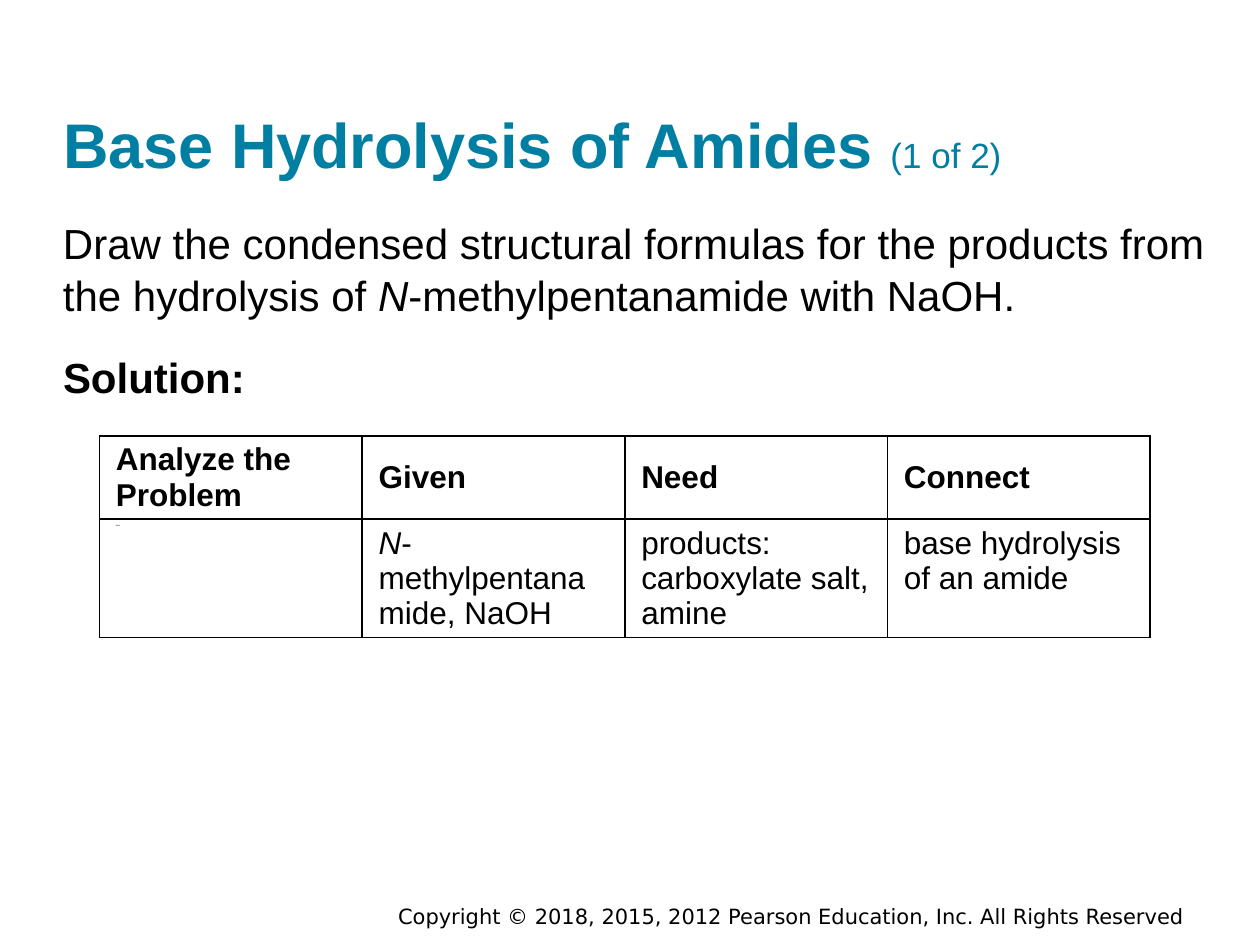
import pptx
import pptx.dml.color
import pptx.enum.text
import pptx.oxml
import pptx.oxml.ns
import pptx.util
from dataclasses import dataclass

Inches = pptx.util.Inches
Pt = pptx.util.Pt
Anchor = pptx.enum.text.MSO_ANCHOR
Align = pptx.enum.text.PP_ALIGN


@dataclass(frozen=True)
class Theme:
    font: str = "Arial"
    footer_font: str = "DejaVu Sans"
    accent: str = "007FA3"
    ink: str = "000000"
    title: float = 36
    title_note: float = 20
    body: float = 24
    cell: float = 18
    footer: float = 12
    tiny: float = 1
    line_spacing: float = 1.04
    border: float = 1


class SlideBuilder:
    def __init__(self, presentation, theme):
        self.theme = theme
        self.slide = presentation.slides.add_slide(presentation.slide_layouts[5])

    def add_runs(self, paragraph, parts, size, color=None, font=None):
        """Add (text, overrides) parts as runs; overrides are font attributes."""
        for text, overrides in parts:
            run = paragraph.add_run()
            run.text = text
            run.font.name = font or self.theme.font
            run.font.size = Pt(overrides.get("size", size))
            run.font.bold = overrides.get("bold", False)
            run.font.italic = overrides.get("italic", False)
            run.font.color.rgb = pptx.dml.color.RGBColor.from_string(color or self.theme.ink)

    def set_frame(self, frame, anchor, margin=0):
        frame.word_wrap = True
        frame.auto_size = pptx.enum.text.MSO_AUTO_SIZE.NONE
        frame.vertical_anchor = anchor
        frame.margin_left = frame.margin_right = Inches(margin)
        frame.margin_top = frame.margin_bottom = Inches(margin)

    def title(self, parts, left, top, width, height):
        heading = self.slide.shapes.title
        heading.left, heading.top = Inches(left), Inches(top)
        heading.width, heading.height = Inches(width), Inches(height)
        self.set_frame(heading.text_frame, Anchor.BOTTOM)
        paragraph = heading.text_frame.paragraphs[0]
        paragraph.alignment = Align.LEFT
        self.add_runs(paragraph, parts, self.theme.title, self.theme.accent)

    def add_box(self, left, top, width, height):
        return self.slide.shapes.add_textbox(
            Inches(left), Inches(top), Inches(width), Inches(height)).text_frame

    def body(self, parts, *place):
        frame = self.add_box(*place)
        self.set_frame(frame, Anchor.TOP)
        frame.paragraphs[0].line_spacing = self.theme.line_spacing
        self.add_runs(frame.paragraphs[0], parts, self.theme.body)

    def footer(self, text, *place):
        frame = self.add_box(*place)
        self.set_frame(frame, Anchor.MIDDLE, margin=0.1)
        frame.paragraphs[0].alignment = Align.RIGHT
        self.add_runs(frame.paragraphs[0], [(text, {})], self.theme.footer,
                      font=self.theme.footer_font)

    def border(self, cell):
        properties = cell._tc.get_or_add_tcPr()
        for position, side in enumerate(("lnL", "lnR", "lnT", "lnB")):
            properties.insert(position, pptx.oxml.parse_xml(
                f'<a:{side} {pptx.oxml.ns.nsdecls("a")} w="{Pt(self.theme.border)}">'
                f'<a:solidFill><a:srgbClr val="{self.theme.ink}"/></a:solidFill></a:{side}>'))

    def table(self, rows, left, top, width, row_heights):
        grid = self.slide.shapes.add_table(
            len(rows), len(rows[0]), Inches(left), Inches(top),
            Inches(width), Inches(sum(row_heights))).table
        grid.horz_banding = False
        for row_index, (row, height) in enumerate(zip(rows, row_heights)):
            grid.rows[row_index].height = Inches(height)
            for column_index, parts in enumerate(row):
                cell = grid.cell(row_index, column_index)
                cell.fill.background()
                cell.margin_left = cell.margin_right = Inches(0.13)
                cell.margin_top = cell.margin_bottom = Inches(0.05)
                cell.vertical_anchor = Anchor.TOP if row_index else Anchor.MIDDLE
                self.add_runs(cell.text_frame.paragraphs[0], parts, self.theme.cell)
                self.border(cell)


def main():
    presentation = pptx.Presentation()
    presentation.slide_width, presentation.slide_height = Inches(10), Inches(7.5)
    theme = Theme()
    builder = SlideBuilder(presentation, theme)
    bold, italic = {"bold": True}, {"italic": True}

    builder.footer("Copyright © 2018, 2015, 2012 Pearson Education, Inc. All Rights Reserved",
                   2.9, 7.04, 6.6, 0.46)
    builder.title([("Base Hydrolysis of Amides ", bold),
                   ("(1 of 2)", {"size": theme.title_note})], 0.5, 0.24, 9, 1.2)
    builder.body([("Draw the condensed structural formulas for the products from "
                   "the hydrolysis of ", {}),
                  ("N", italic),
                  ("-methylpentanamide with NaOH.", {})], 0.5, 1.71, 9.27, 0.89)
    builder.body([("Solution:", bold)], 0.5, 2.77, 1.65, 0.49)

    headings = ["Analyze the Problem", "Given", "Need", "Connect"]
    builder.table([
        [[(heading, bold)] for heading in headings],
        [[("Blank", {"size": theme.tiny})],
         [("N", italic), ("-methylpentanamide, NaOH", {})],
         [("products: carboxylate salt, amine", {})],
         [("base hydrolysis of an amide", {})]],
    ], 0.79, 3.46, 8.34, [0.66, 0.94])

    presentation.save("out.pptx")


if __name__ == "__main__":
    main()
